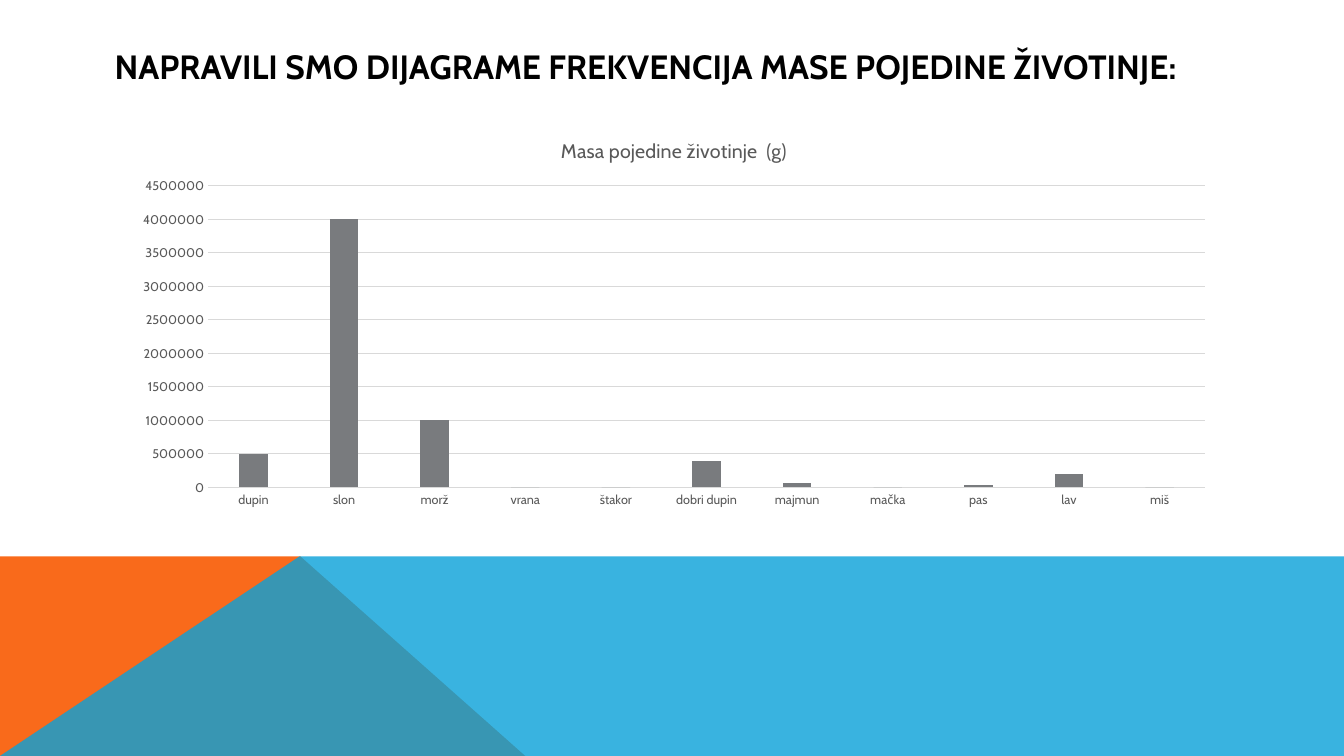
from dataclasses import dataclass

from lxml.etree import SubElement
from pptx import Presentation
from pptx.chart.data import CategoryChartData
from pptx.dml.color import RGBColor
from pptx.enum.chart import XL_CHART_TYPE, XL_TICK_MARK
from pptx.enum.text import MSO_ANCHOR, PP_ALIGN
from pptx.oxml.ns import qn
from pptx.util import Inches, Pt

FONT = "Cabin"
BLACK, LABEL_GRAY, GRID_GRAY, BAR_GRAY = "000000", "595959", "D9D9D9", "797B7E"

MASSES = {
    "dupin": 500000,
    "slon": 4000000,
    "morž": 1000000,
    "vrana": 0,
    "štakor": 0,
    "dobri dupin": 400000,
    "majmun": 60000,
    "mačka": 0,
    "pas": 30000,
    "lav": 200000,
    "miš": 0,
}


@dataclass(frozen=True)
class Band:
    points: tuple[tuple[float, float], ...]
    color: str
    opacity: int = 100


BANDS = (
    Band(((0, 7.5), (0, 5.52), (2.98, 5.52), (5.21, 7.5)), "F96A1B"),
    Band(((0, 7.5), (2.97, 5.52), (13.33, 5.52), (13.33, 7.5)), "08A1D9", 80),
)


def rgb(color: str) -> RGBColor:
    return RGBColor.from_string(color)


def style_font(font, size: float, color: str, bold: bool = False) -> None:
    font.name = FONT
    font.size = Pt(size)
    font.bold = bold
    font.color.rgb = rgb(color)


def write_text(frame, text: str, *, size: float, color: str, bold: bool = False) -> None:
    paragraph = frame.paragraphs[0]
    paragraph.alignment = PP_ALIGN.CENTER
    run = paragraph.add_run()
    run.text = text
    style_font(run.font, size, color, bold)


def draw_band(slide, band: Band) -> None:
    start, *others = [(Inches(x), Inches(y)) for x, y in band.points]
    builder = slide.shapes.build_freeform(*start)
    builder.add_line_segments(others, close=True)
    shape = builder.convert_to_shape()
    shape.shadow.inherit = False
    shape.line.fill.background()
    shape.fill.solid()
    shape.fill.fore_color.rgb = rgb(band.color)
    if band.opacity < 100:
        fill_color = shape.fill._xPr.find(f".//{qn('a:srgbClr')}")
        SubElement(fill_color, qn("a:alpha"), val=str(band.opacity * 1000))


def draw_heading(slide, text: str) -> None:
    heading = slide.shapes.add_textbox(Inches(0.69), Inches(0.16), Inches(11.5), Inches(0.99))
    frame = heading.text_frame
    frame.word_wrap = True
    frame.vertical_anchor = MSO_ANCHOR.MIDDLE
    write_text(frame, text, size=24, color=BLACK, bold=True)


def style_line(line, color: str) -> None:
    line.color.rgb = rgb(color)
    line.width = Pt(0.75)


def draw_mass_chart(slide, title: str) -> None:
    data = CategoryChartData(number_format="0")
    data.categories = list(MASSES)
    data.add_series("Masa", list(MASSES.values()))
    chart = slide.shapes.add_chart(
        XL_CHART_TYPE.COLUMN_CLUSTERED,
        Inches(1.2), Inches(1.2), Inches(10.97), Inches(3.91), data,
    ).chart
    style_font(chart.font, 10, BLACK)
    chart.has_legend = False
    chart.has_title = True
    chart.chart_title.include_in_layout = False
    write_text(chart.chart_title.text_frame, title, size=14, color=LABEL_GRAY)

    for axis in (chart.category_axis, chart.value_axis):
        axis.major_tick_mark = axis.minor_tick_mark = XL_TICK_MARK.NONE
        style_font(axis.tick_labels.font, 9, LABEL_GRAY)
    style_line(chart.category_axis.format.line, GRID_GRAY)

    mass_axis = chart.value_axis
    mass_axis.minimum_scale, mass_axis.maximum_scale = 0, 4500000
    mass_axis.major_unit = 500000
    mass_axis.tick_labels.number_format = "0"
    mass_axis.tick_labels.number_format_is_linked = False
    mass_axis.format.line.fill.background()
    style_line(mass_axis.major_gridlines.format.line, GRID_GRAY)

    columns = chart.plots[0]
    columns.gap_width, columns.overlap = 219, -27
    columns.vary_by_categories = False
    bar_fill = columns.series[0].format.fill
    bar_fill.solid()
    bar_fill.fore_color.rgb = rgb(BAR_GRAY)


def main() -> None:
    deck = Presentation()
    deck.slide_width, deck.slide_height = Inches(13.33), Inches(7.5)
    slide = deck.slides.add_slide(deck.slide_layouts[6])
    for band in BANDS:
        draw_band(slide, band)
    draw_heading(slide, "NAPRAVILI SMO DIJAGRAME FREKVENCIJA MASE POJEDINE ŽIVOTINJE: ")
    draw_mass_chart(slide, "Masa pojedine životinje  (g)")
    deck.save("out.pptx")


if __name__ == "__main__":
    main()
